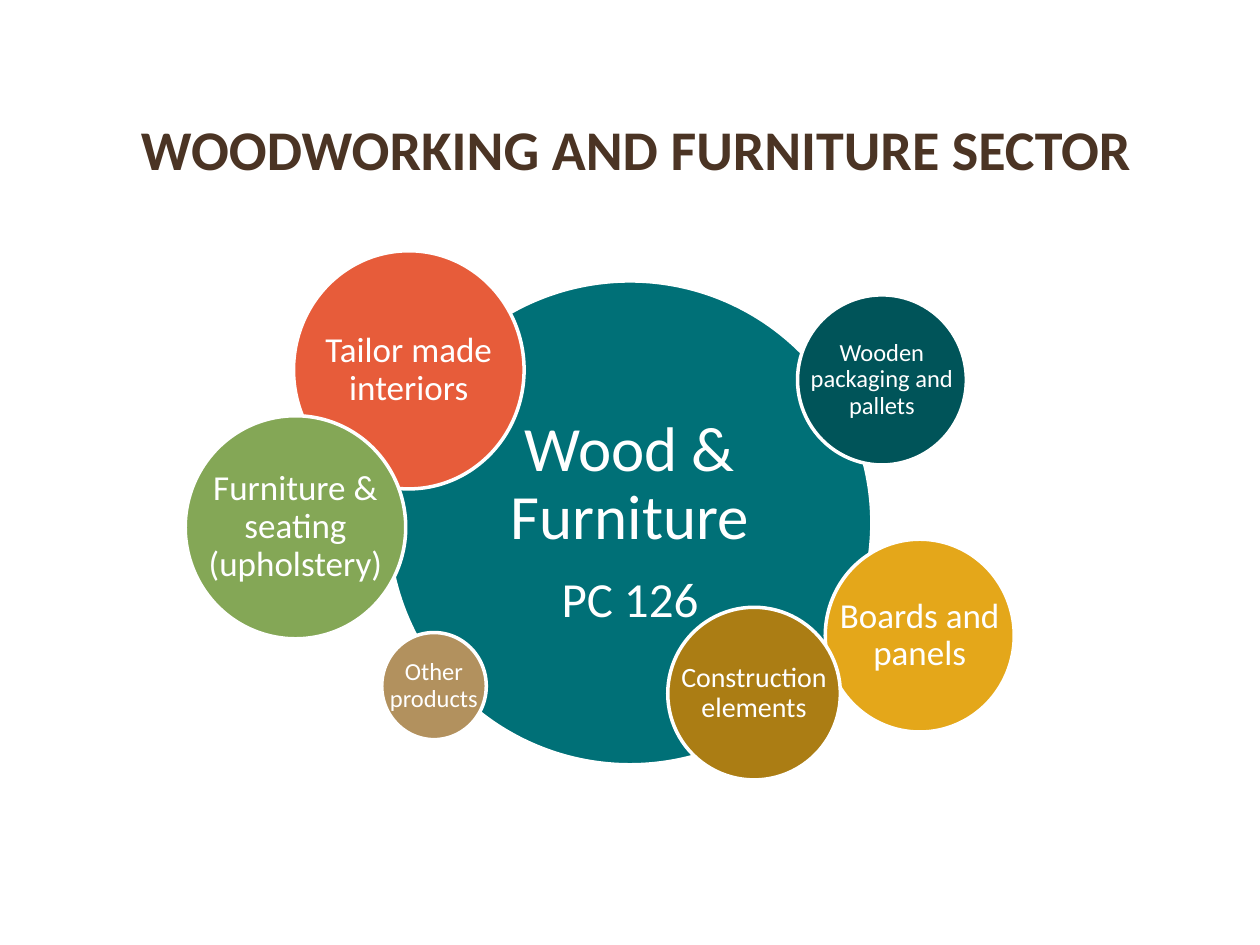
from dataclasses import dataclass

from pptx import Presentation
from pptx.dml.color import RGBColor
from pptx.enum.shapes import MSO_SHAPE as Shape
from pptx.enum.text import MSO_ANCHOR as Anchor, PP_ALIGN as Align
from pptx.util import Inches, Pt


@dataclass(frozen=True)
class Theme:
    font: str = "Calibri"
    brown: str = "4B3424"
    white: str = "FFFFFF"
    teal: str = "007077"
    dark_teal: str = "005459"
    orange: str = "E75C3A"
    green: str = "84A756"
    yellow: str = "E4A71A"
    ochre: str = "AB7D14"
    tan: str = "B2915E"
    hub: int = 36
    title: int = 32
    code: int = 28
    large: int = 20
    medium: int = 16
    small: int = 14


theme = Theme()


def write_lines(paragraph, lines, size, color, bold=False):
    paragraph.alignment = Align.CENTER
    for index, line in enumerate(lines):
        if index:
            paragraph.add_line_break()
        run = paragraph.add_run()
        run.text = line
        run.font.name = theme.font
        run.font.size = Pt(size)
        run.font.bold = bold
        run.font.color.rgb = RGBColor.from_string(color)


def add_bubble(left, top, width, height, fill, paragraphs):
    bubble = slide.shapes.add_shape(
        Shape.OVAL, Inches(left), Inches(top), Inches(width), Inches(height)
    )
    bubble.shadow.inherit = False
    bubble.fill.solid()
    bubble.fill.fore_color.rgb = RGBColor.from_string(fill)
    bubble.line.color.rgb = RGBColor.from_string(theme.white)
    bubble.line.width = Pt(2)
    frame = bubble.text_frame
    frame.word_wrap = False
    frame.vertical_anchor = Anchor.MIDDLE
    frame.margin_left = frame.margin_right = Inches(0)
    frame.margin_top = frame.margin_bottom = Inches(0)
    for index, (size, lines) in enumerate(paragraphs):
        paragraph = frame.add_paragraph() if index else frame.paragraphs[0]
        paragraph.line_spacing = 0.9
        if index < len(paragraphs) - 1:
            paragraph.space_after = Pt(round(size * 0.35, 1))
        write_lines(paragraph, lines, size, theme.white)


deck = Presentation()
deck.slide_width, deck.slide_height = Inches(10), Inches(7.5)
slide = deck.slides.add_slide(deck.slide_layouts[6])

title = slide.shapes.add_textbox(Inches(1), Inches(0.44), Inches(8.1), Inches(1.47))
heading = title.text_frame
heading.word_wrap = True
heading.vertical_anchor = Anchor.MIDDLE
heading.margin_left = heading.margin_right = Inches(0)
write_lines(
    heading.paragraphs[0],
    ["WOODWORKING AND FURNITURE SECTOR"],
    theme.title,
    theme.brown,
    bold=True,
)

add_bubble(
    3.08, 2.23, 3.84, 3.84, theme.teal,
    [(theme.hub, ["Wood &", "Furniture"]), (theme.code, ["PC 126"])],
)

sectors = [
    (2.33, 1.99, 1.83, 1.89, theme.orange, theme.large, ["Tailor made", "interiors"]),
    (1.47, 3.3, 1.75, 1.77, theme.green, theme.large,
     ["Furniture &", "seating", "(upholstery)"]),
    (6.55, 4.28, 1.5, 1.53, theme.yellow, theme.large, ["Boards and", "panels"]),
    (6.33, 2.34, 1.34, 1.35, theme.dark_teal, theme.small,
     ["Wooden", "packaging and", "pallets"]),
    (5.3, 4.82, 1.37, 1.37, theme.ochre, theme.medium, ["Construction", "elements"]),
    (3.03, 5.02, 0.83, 0.85, theme.tan, theme.small, ["Other", "products"]),
]
for left, top, width, height, fill, size, lines in sectors:
    add_bubble(left, top, width, height, fill, [(size, lines)])

deck.save("out.pptx")
